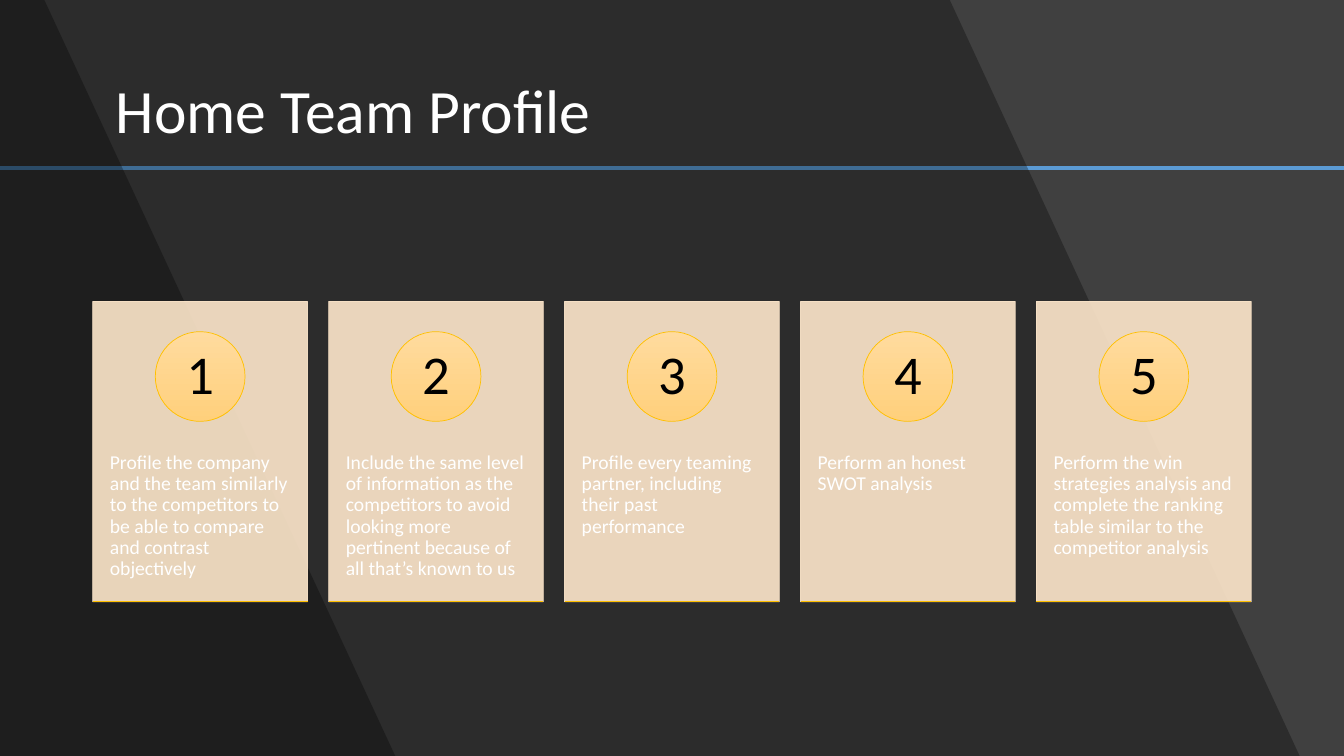
import pptx
import pptx.util
import pptx.dml.color
import pptx.enum.shapes
import pptx.enum.text
import pptx.oxml.ns
from lxml import etree

RGBColor = pptx.dml.color.RGBColor
SHAPE = pptx.enum.shapes.MSO_SHAPE
STRAIGHT = pptx.enum.shapes.MSO_CONNECTOR.STRAIGHT
ANCHOR = pptx.enum.text.MSO_ANCHOR
ALIGN = pptx.enum.text.PP_ALIGN
qn = pptx.oxml.ns.qn

PX = 9144  # 100 px to the inch
W, H = 1333, 750
BACKGROUND = RGBColor(0x40, 0x40, 0x40)
BLACK = RGBColor(0, 0, 0)
WHITE = RGBColor(0xFF, 0xFF, 0xFF)
BLUE = RGBColor(0x5B, 0x9B, 0xD5)
CREAM = RGBColor(0xFF, 0xE8, 0xCC)
GOLD = RGBColor(0xFF, 0xC0, 0x00)
BADGE_TOP = RGBColor(0xFF, 0xDB, 0x9E)
BADGE_BOTTOM = RGBColor(0xFF, 0xD0, 0x7C)

STEPS = [
    "Profile the company and the team similarly to the competitors to be able to compare and contrast objectively",
    "Include the same level of information as the competitors to avoid looking more pertinent because of all that’s known to us",
    "Profile every teaming partner, including their past performance",
    "Perform an honest SWOT analysis",
    "Perform the win strategies analysis and complete the ranking table similar to the competitor analysis",
]


def write(sp, text, size, color, align=ALIGN.LEFT, anchor=ANCHOR.MIDDLE, insets=(10, 5, 10, 5)):
    tf = sp.text_frame
    tf.word_wrap = True
    tf.auto_size = pptx.enum.text.MSO_AUTO_SIZE.NONE
    tf.vertical_anchor = anchor
    tf.margin_left, tf.margin_top, tf.margin_right, tf.margin_bottom = [v * PX for v in insets]
    p = tf.paragraphs[0]
    p.alignment = align
    p.line_spacing = 0.9
    r = p.add_run()
    r.text = text
    r.font.name = "Calibri"
    r.font.size = pptx.util.Pt(size)
    r.font.color.rgb = color


def set_alpha(sp, percent):
    for color in sp._element.spPr.iter(qn("a:srgbClr")):
        etree.SubElement(color, qn("a:alpha")).set("val", str(percent * 1000))


prs = pptx.Presentation()
prs.slide_width, prs.slide_height = W * PX, H * PX
s = prs.slides.add_slide(prs.slide_layouts[5])
s.background.fill.solid()
s.background.fill.fore_color.rgb = BACKGROUND

# Blue rule, and the gold foot of each card
card_left, card_top, card_w, card_h, pitch = 92, 299, 213, 298, 234
card_bottom = card_top + card_h
rules = [(0, W, 167, BLUE, 3)]
rules += [(card_left + i * pitch, card_w, card_bottom, GOLD, 0.5) for i in range(len(STEPS))]
feet = []
for x, width, y, color, weight in rules:
    rule = s.shapes.add_connector(STRAIGHT, x * PX, y * PX, (x + width) * PX, y * PX)
    rule.line.color.rgb = color
    rule.line.width = pptx.util.Pt(weight)
    etree.SubElement(rule._element.spPr, qn("a:effectLst"))
    if color == GOLD:
        feet.append(rule)

# Dark slanted panels
for top_x, bottom_x in [(942, 1289), (44, 392)]:
    outline = s.shapes.build_freeform(0, 0, scale=PX)
    outline.add_line_segments([(top_x, 0), (bottom_x, H), (0, H)])
    panel = outline.convert_to_shape()
    panel.shadow.inherit = False
    panel.fill.solid()
    panel.fill.fore_color.rgb = BLACK
    panel.line.fill.background()
    set_alpha(panel, 30)

# Title, brought in front of the panels
title = s.shapes.title
title.left, title.top, title.width, title.height = [v * PX for v in (91, 40, 1151, 145)]
write(title, "Home Team Profile", 44, WHITE, insets=(24, 5, 10, 5))
s.shapes._spTree.append(title._element)

# Numbered cards
badge_size = 89
for i, step in enumerate(STEPS):
    x = card_left + i * pitch
    card = s.shapes.add_shape(SHAPE.RECTANGLE, x * PX, card_top * PX, card_w * PX, card_h * PX)
    card.shadow.inherit = False
    card.fill.solid()
    card.fill.fore_color.rgb = CREAM
    card.line.color.rgb = CREAM
    card.line.width = pptx.util.Pt(0.5)
    set_alpha(card, 90)
    write(card, step, 14, WHITE, anchor=ANCHOR.TOP, insets=(17, 150, 17, 5))

    badge_x = x + (card_w - badge_size) // 2
    badge = s.shapes.add_shape(SHAPE.OVAL, badge_x * PX, 329 * PX, badge_size * PX, badge_size * PX)
    badge.shadow.inherit = False
    badge.fill.gradient()
    badge.fill.gradient_angle = 270
    for stop, color in zip(badge.fill.gradient_stops, (BADGE_TOP, BADGE_BOTTOM)):
        stop.color.rgb = color
    badge.line.color.rgb = GOLD
    badge.line.width = pptx.util.Pt(0.5)
    write(badge, str(i + 1), 39, BLACK, align=ALIGN.CENTER, insets=(7, 1, 7, 1))

    feet[i].begin_x = x * PX
    s.shapes._spTree.append(feet[i]._element)

prs.save("out.pptx")
